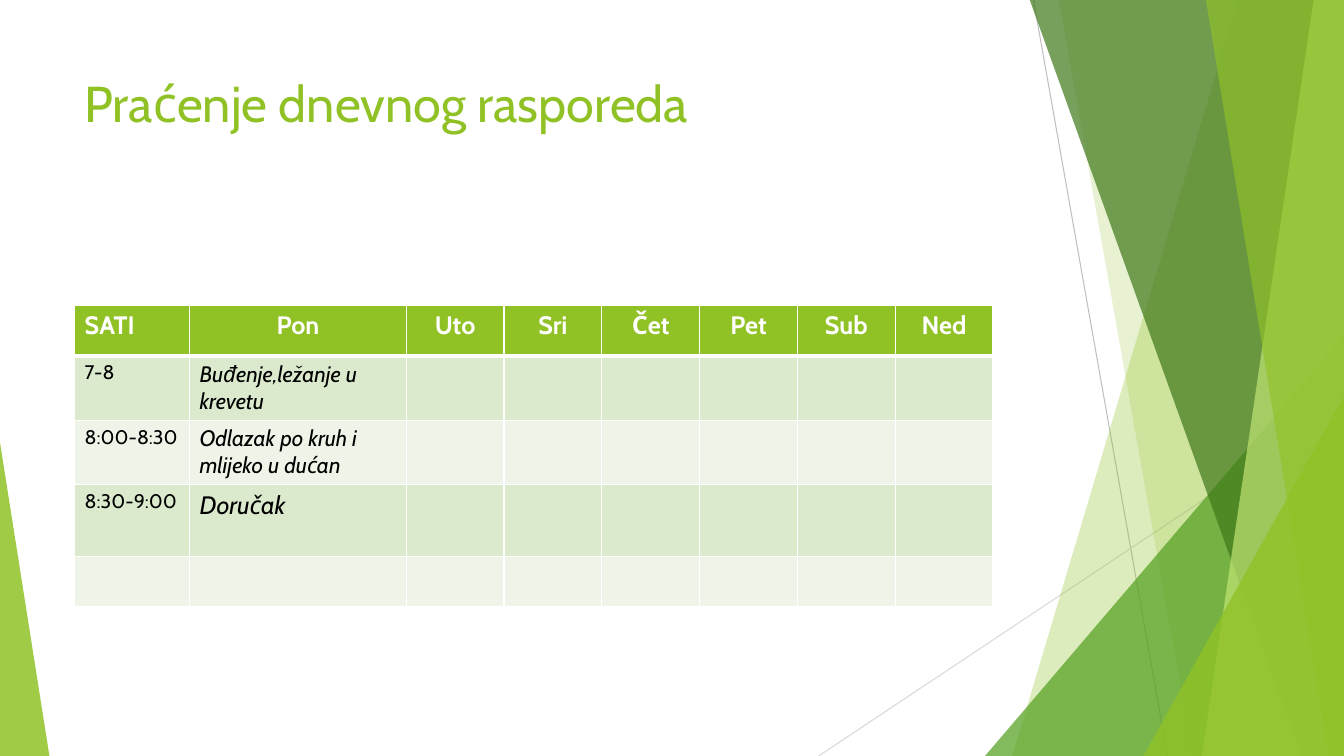
from lxml import etree
from pptx import Presentation
from pptx.dml.color import RGBColor
from pptx.enum.shapes import MSO_CONNECTOR, MSO_SHAPE
from pptx.enum.text import MSO_ANCHOR, PP_ALIGN
from pptx.oxml.ns import qn
from pptx.util import Inches, Pt

LINE = MSO_CONNECTOR.STRAIGHT
TRIANGLE = MSO_SHAPE.ISOSCELES_TRIANGLE
TOP = MSO_ANCHOR.TOP
LEFT, CENTER = PP_ALIGN.LEFT, PP_ALIGN.CENTER

LIME = RGBColor(0x90, 0xC2, 0x26)
GREEN = RGBColor(0x54, 0xA0, 0x21)
DARK = RGBColor(0x3F, 0x78, 0x19)
PALE = RGBColor(0xC0, 0xE4, 0x74)
BAND = RGBColor(0xDB, 0xE9, 0xCD)
LIGHT = RGBColor(0xEE, 0xF4, 0xE8)
GREY = RGBColor(0xBF, 0xBF, 0xBF)
SILVER = RGBColor(0xD9, 0xD9, 0xD9)
WHITE = RGBColor(0xFF, 0xFF, 0xFF)
BLACK = RGBColor(0, 0, 0)

WIDE, HIGH = 13.33, 7.5


class Board:
    font = "Cabin"

    def __init__(self, slide):
        self.slide = slide
        self.shapes = slide.shapes

    def line(self, start, end, color):
        x1, y1, x2, y2 = map(Inches, start + end)
        line = self.shapes.add_connector(LINE, x1, y1, x2, y2)
        line.line.color.rgb = color
        line.line.width = Pt(0.75)
        etree.SubElement(line._element.spPr, qn("a:effectLst"))

    def paint(self, shape, color, alpha):
        shape.shadow.inherit = False
        shape.line.fill.background()
        shape.fill.solid()
        shape.fill.fore_color.rgb = color
        tint = shape._element.spPr.find(qn("a:solidFill"))[0]
        etree.SubElement(tint, qn("a:alpha")).set("val", str(alpha * 1000))

    def shard(self, top, base, color, alpha):
        points = [(top, -0.01), (WIDE, -0.01), (WIDE, HIGH), (base, HIGH)]
        spots = [(Inches(x), Inches(y)) for x, y in points]
        form = self.shapes.build_freeform(*spots[0])
        form.add_line_segments(spots[1:], close=True)
        self.paint(form.convert_to_shape(), color, alpha)

    def wedge(self, left, top, width, tip, color, alpha):
        box = map(Inches, (left, top, width, HIGH - top))
        shape = self.shapes.add_shape(TRIANGLE, *box)
        shape.adjustments[0] = tip
        self.paint(shape, color, alpha)

    def text(self, frame, words, size, color, align=LEFT, bold=False, slant=False):
        para = frame.paragraphs[0]
        para.alignment = align
        run = para.add_run()
        run.text = words
        font = run.font
        font.name, font.size = self.font, Pt(size)
        font.bold, font.italic = bold, slant
        font.color.rgb = color

    def title(self, box, words):
        frame = self.shapes.add_textbox(*map(Inches, box)).text_frame
        frame.word_wrap = True
        frame.vertical_anchor = TOP
        self.text(frame, words, 36, LIME)

    def edge(self, cell, base):
        props = cell._tc.get_or_add_tcPr()
        for side, width in (("L", 1), ("R", 1), ("T", 1), ("B", base)):
            rule = etree.SubElement(props, qn("a:ln" + side), w=str(Pt(width)))
            fill = etree.SubElement(rule, qn("a:solidFill"))
            etree.SubElement(fill, qn("a:srgbClr"), val=str(WHITE))

    def table(self, left, top, cols, rows):
        box = map(Inches, (left, top, sum(cols), sum(rows)))
        table = self.shapes.add_table(len(rows), len(cols), *box).table
        for col, width in zip(table.columns, cols):
            col.width = Inches(width)
        for row, height in zip(table.rows, rows):
            row.height = Inches(height)
        for r, row in enumerate(table.rows):
            for cell in row.cells:
                self.edge(cell, 1 if r else 3)
                cell.fill.solid()
                cell.fill.fore_color.rgb = (BAND if r % 2 else LIGHT) if r else LIME
        return table


def main():
    deck = Presentation()
    deck.slide_width, deck.slide_height = Inches(WIDE), Inches(HIGH)
    board = Board(deck.slides.add_slide(deck.slide_layouts[6]))

    board.line((10.25, 0), (11.58, HIGH), GREY)
    board.line((WIDE, 4.03), (8.12, HIGH), SILVER)
    board.shard(12.28, 10.04, LIME, 30)
    board.shard(10.5, 11.83, LIME, 20)
    board.wedge(9.77, 3.33, 3.56, 1, GREEN, 72)
    board.shard(10.21, 12.91, DARK, 70)
    board.shard(13.03, 11.92, PALE, 70)
    board.shard(11.96, 13.18, LIME, 65)
    board.wedge(11.34, 3.93, 1.99, 1, LIME, 80)
    board.wedge(0, 4.39, 0.49, 0, LIME, 85)

    board.title((0.74, 0.67, 9.4, 1.44), "Praćenje dnevnog rasporeda")

    cols = [1.14, 2.15] + [0.97] * 6
    table = board.table(0.74, 3.03, cols, [0.5, 0.64, 0.64, 0.71, 0.5])
    days = ["SATI", "Pon", "Uto", "Sri", "Čet", "Pet", "Sub", "Ned"]
    for c, day in enumerate(days):
        frame = table.cell(0, c).text_frame
        board.text(frame, day, 18, WHITE, CENTER if c else LEFT, bold=True)
    tasks = [
        ("7-8", "Buđenje,ležanje u krevetu", 16),
        ("8:00-8:30", "Odlazak po kruh i mlijeko u dućan", 16),
        ("8:30-9:00", "Doručak", 18),
    ]
    for r, (time, task, size) in enumerate(tasks, 1):
        board.text(table.cell(r, 0).text_frame, time, 14, BLACK)
        board.text(table.cell(r, 1).text_frame, task, size, BLACK, slant=True)

    deck.save("out.pptx")


if __name__ == "__main__":
    main()
